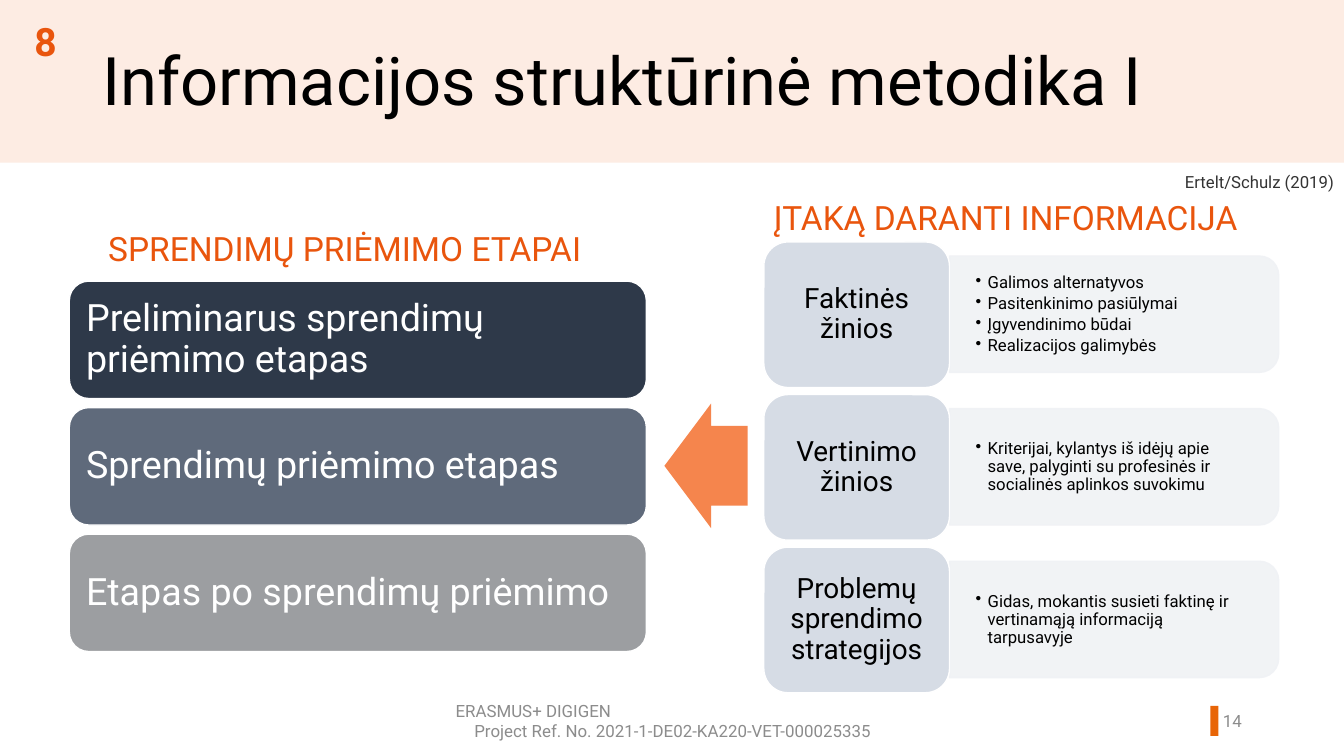
from lxml import etree
from pptx import Presentation
from pptx import util as u
from pptx.dml.color import RGBColor
from pptx.enum import shapes, text
from pptx.oxml.ns import qn

COLOURS = {
    "white": "FFFFFF", "black": "000000", "band": "FDECE3",
    "marker": "E86507", "accent": "E9550D", "arrow": "F5854D",
    "footer": "8C8C8C", "source": "333333",
    "before": "2E3949", "during": "5F6A7B", "after": "9C9EA1",
    "topic": "D6DCE5", "panel": "F0F2F5",
}
SHAPE = shapes.MSO_SHAPE
ALIGN = text.PP_ALIGN
ANCHOR = text.MSO_ANCHOR


class SlideBuilder:
    font_name = "Roboto"

    def __init__(self, slide):
        self.slide = slide

    def colour(self, name):
        return RGBColor.from_string(COLOURS[name])

    def shape(self, kind, left, top, width, height, fill, line=None):
        shape = self.slide.shapes.add_shape(
            kind, *map(u.Inches, (left, top, width, height)))
        shape.shadow.inherit = False
        shape.fill.solid()
        shape.fill.fore_color.rgb = self.colour(fill)
        if line:
            shape.line.color.rgb = self.colour(line)
            shape.line.width = u.Pt(1)
        else:
            shape.line.fill.background()
        return shape

    def label(self, shape, lines, size, colour, align=ALIGN.LEFT,
              anchor=ANCHOR.TOP, margins=(0.1, 0.05), spacing=None,
              bold=False, bullets=False):
        frame = shape.text_frame
        frame.word_wrap = True
        frame.vertical_anchor = anchor
        frame.margin_left = frame.margin_right = u.Inches(margins[0])
        frame.margin_top = frame.margin_bottom = u.Inches(margins[1])
        for index, line in enumerate(lines):
            paragraph = frame.add_paragraph() if index else frame.paragraphs[0]
            paragraph.text = line
            paragraph.alignment = align
            if bullets:
                self.bullet(paragraph)
            if spacing:
                paragraph.line_spacing = spacing
            font = paragraph.font
            font.name = self.font_name
            font.size = u.Pt(size)
            font.bold = bold
            font.color.rgb = self.colour(colour)
        return frame

    def bullet(self, paragraph):
        properties = paragraph._p.get_or_add_pPr()
        properties.set("marL", str(u.Inches(0.12)))
        properties.set("indent", str(-u.Inches(0.12)))
        etree.SubElement(properties, qn("a:buChar")).set("char", "•")
        paragraph.space_after = u.Pt(2)

    def text_box(self, left, top, width, height, lines, size, colour, **style):
        box = self.slide.shapes.add_textbox(
            *map(u.Inches, (left, top, width, height)))
        return self.label(box, lines, size, colour, **style)

    def stage(self, top, name, fill):
        shape = self.shape(SHAPE.ROUNDED_RECTANGLE, 0.69, top, 5.75, 1.17,
                           fill, "white")
        self.label(shape, [name], 27, "white", anchor=ANCHOR.MIDDLE,
                   margins=(0.11, 0.11), spacing=0.9)

    def knowledge(self, top, name, details):
        panel = self.shape(SHAPE.ROUND_2_SAME_RECTANGLE, 10.52, top - 0.92,
                           1.16, 3.28, "panel", "panel")
        panel.rotation = 90
        for colour in panel._element.spPr.iter(qn("a:srgbClr")):
            etree.SubElement(colour, qn("a:alpha")).set("val", "90000")
        self.text_box(9.45, top + 0.2, 3.23, 1.05, details, 12, "black",
                      anchor=ANCHOR.MIDDLE, margins=(0.27, 0.14),
                      spacing=0.9, bullets=True)
        topic = self.shape(SHAPE.ROUNDED_RECTANGLE, 7.61, top, 1.85, 1.45,
                           "topic", "white")
        self.label(topic, [name], 20, "black", align=ALIGN.CENTER,
                   anchor=ANCHOR.MIDDLE, margins=(0.08, 0.04), spacing=0.9)


def main():
    presentation = Presentation()
    presentation.slide_width = u.Inches(13.39)
    presentation.slide_height = u.Inches(7.53)
    slide = presentation.slides.add_slide(presentation.slide_layouts[6])
    builder = SlideBuilder(slide)

    # Header band and footer
    builder.shape(SHAPE.RECTANGLE, 0, 0, 13.39, 1.62, "band")
    builder.shape(SHAPE.RECTANGLE, 12.06, 7.03, 0.08, 0.3, "marker")
    footer = builder.text_box(
        4.44, 6.98, 4.52, 0.4,
        ["ERASMUS+ DIGIGEN", "Project Ref. No. 2021-1-DE02-KA220-VET-000025335"],
        12.1, "footer", align=ALIGN.CENTER, anchor=ANCHOR.MIDDLE)
    footer.paragraphs[0].alignment = ALIGN.LEFT
    builder.text_box(11.82, 6.98, 0.65, 0.4, ["14"], 12.1, "footer",
                     align=ALIGN.RIGHT, anchor=ANCHOR.MIDDLE)

    # Title
    builder.text_box(0.92, 0.41, 10.9, 0.86,
                     ["Informacijos struktūrinė metodika I"], 48, "black",
                     anchor=ANCHOR.MIDDLE, spacing=0.9)

    # Decision stages
    stages = [
        ("Preliminarus sprendimų priėmimo etapas", "before"),
        ("Sprendimų priėmimo etapas", "during"),
        ("Etapas po sprendimų priėmimo", "after"),
    ]
    for row, (name, fill) in enumerate(stages):
        builder.stage(2.8 + 1.26 * row, name, fill)

    # Influencing information
    knowledge = [
        ("Faktinės žinios",
         ["Galimos alternatyvos", "Pasitenkinimo pasiūlymai",
          "Įgyvendinimo būdai", "Realizacijos galimybės"]),
        ("Vertinimo žinios",
         ["Kriterijai, kylantys iš idėjų apie save, palyginti su "
          "profesinės ir socialinės aplinkos suvokimu"]),
        ("Problemų sprendimo strategijos",
         ["Gidas, mokantis susieti faktinę ir vertinamąją informaciją "
          "tarpusavyje"]),
    ]
    for row, (name, details) in enumerate(knowledge):
        builder.knowledge(2.41 + 1.52 * row, name, details)

    # Column headings
    builder.text_box(0.98, 2.22, 5.32, 0.5, ["SPRENDIMŲ PRIĖMIMO ETAPAI"],
                     24, "accent")
    builder.text_box(7.61, 1.91, 5.32, 0.5, ["ĮTAKĄ DARANTI INFORMACIJA"],
                     24, "accent")

    # Arrow from information to stages
    arrow = builder.shape(SHAPE.LEFT_ARROW, 6.62, 4.02, 0.83, 1.24, "arrow")
    arrow.adjustments[0] = 0.64
    arrow.adjustments[1] = 0.56

    # Section number and source
    builder.text_box(0.04, 0.12, 0.83, 0.57, ["8"], 28, "accent",
                     align=ALIGN.CENTER, bold=True)
    builder.text_box(11.38, 1.66, 2.01, 0.3, ["Ertelt/Schulz (2019)"], 12,
                     "source", align=ALIGN.RIGHT)

    presentation.save("out.pptx")


if __name__ == "__main__":
    main()
